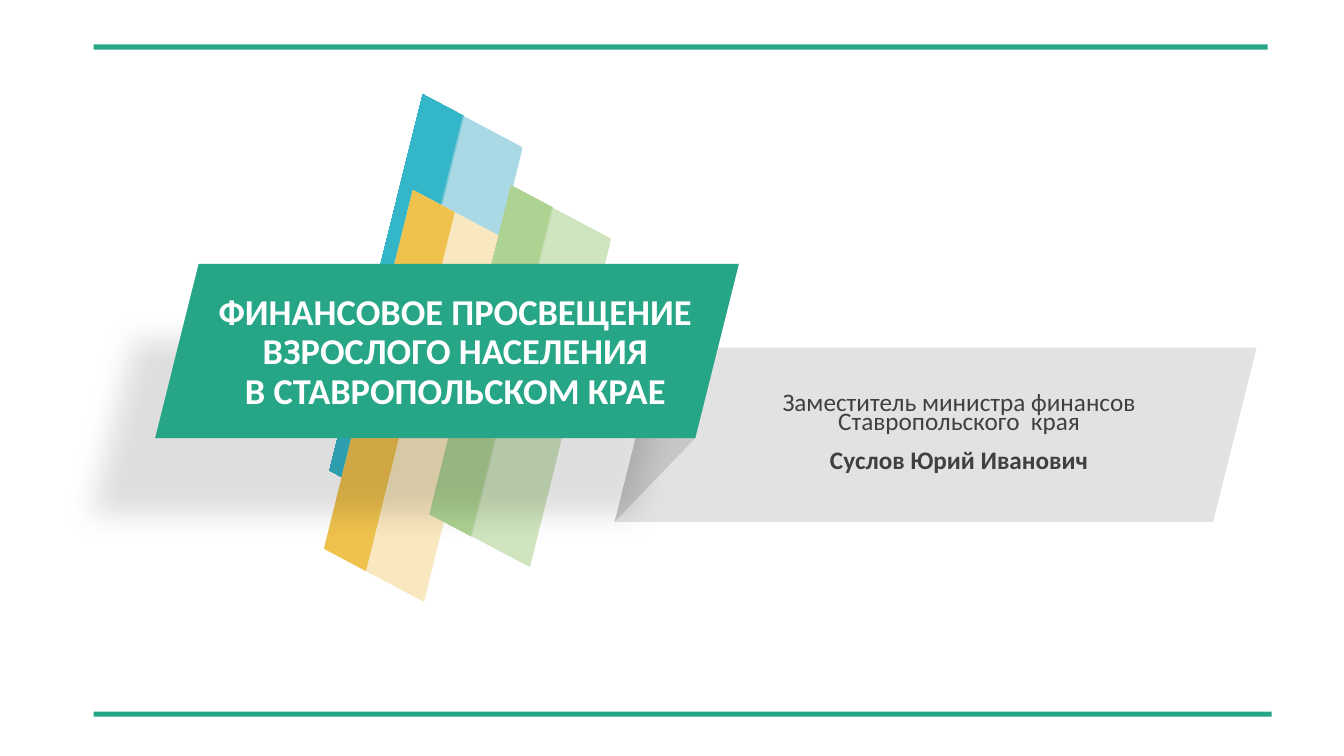
from collections import namedtuple

from lxml.etree import SubElement
from pptx import Presentation
from pptx.dml.color import RGBColor
from pptx.enum.shapes import MSO_SHAPE as Preset
from pptx.enum.text import MSO_ANCHOR as Anchor, MSO_AUTO_SIZE as AutoSize, PP_ALIGN as Align
from pptx.oxml.ns import qn
from pptx.util import Cm, Pt

Box = namedtuple("Box", "left top width height")
GREEN = "27A687"
SKEW = 0.25


def color(value):
    """Turn a hex string into a colour."""
    return RGBColor.from_string(value)


def place(part, box):
    """Move a part into a box given in centimetres."""
    part.left, part.top, part.width, part.height = map(Cm, box)


def paint(part, fill):
    """Give a part a plain fill without line or shadow."""
    part.fill.solid()
    part.fill.fore_color.rgb = color(fill)
    part.line.fill.background()
    part.shadow.inherit = False


def add_block(slide, preset, box, fill):
    """Add a plainly filled preset shape."""
    block = slide.shapes.add_shape(preset, *map(Cm, box))
    paint(block, fill)
    return block


def write(paragraph, text, size=18, ink="404040", bold=False, spacing=1.0, after=0):
    """Write centred text into a paragraph with the given format."""
    paragraph.alignment = Align.CENTER
    paragraph.line_spacing = spacing
    paragraph.space_before, paragraph.space_after = Pt(0), Pt(after)
    run = paragraph.add_run()
    run.text = text
    run.font.name, run.font.size, run.font.bold = "Calibri", Pt(size), bold
    run.font.color.rgb = color(ink)


def open_placeholder(holder, box):
    """Bring a placeholder to the front of its box and return its text frame."""
    place(holder, box)
    holder.element.getparent().append(holder.element)
    frame = holder.text_frame
    frame.word_wrap, frame.auto_size = True, AutoSize.NONE
    frame.vertical_anchor = Anchor.MIDDLE
    return frame


def draw_ribbon(slide, box, light, dark, dark_start):
    """Draw one slanted ribbon split lengthwise into two tones."""
    ribbon = add_block(slide, Preset.PARALLELOGRAM, box, light)
    ribbon.rotation = 283.9
    ribbon.fill.gradient()
    ribbon.fill.gradient_angle = 90
    tones = ((0.53, light), (dark_start, dark))
    for stop, (position, tone) in zip(ribbon.fill.gradient_stops, tones):
        stop.position = position
        stop.color.rgb = color(tone)


def draw_speaker(slide, box):
    """Draw the grey panel with the speaker's post and name."""
    add_block(slide, Preset.PARALLELOGRAM, box, "E2E2E2")
    inner = Box(box.left + 2.7, box.top + 1.1, 11.96, 2.24)
    frame = open_placeholder(slide.placeholders[1], inner)
    write(frame.paragraphs[0], "Заместитель министра финансов Ставропольского  края",
          spacing=Pt(14), after=6)
    write(frame.add_paragraph(), "Суслов Юрий Иванович", bold=True)


def draw_fold(slide, panel, banner):
    """Draw the translucent fold joining the panel to the banner."""
    right = banner.left + banner.width
    corners = [
        (panel.left, panel.top + panel.height),
        (panel.left + SKEW * panel.height, panel.top),
        (right, banner.top),
        (right - SKEW * banner.height, banner.top + banner.height),
    ]
    start, *rest = [(Cm(x), Cm(y)) for x, y in corners]
    fold = slide.shapes.build_freeform(*start).add_line_segments(rest).convert_to_shape()
    paint(fold, "BFBFBF")
    tint = fold.element.spPr.find(qn("a:solidFill"))[0]
    SubElement(tint, qn("a:alpha"), val="76000")


def draw_banner(slide, box):
    """Draw the green banner with its cast shadow and the title."""
    banner = add_block(slide, Preset.PARALLELOGRAM, box, GREEN)
    effects = banner.element.spPr.find(qn("a:effectLst"))
    cast = SubElement(effects, qn("a:outerShdw"), blurRad=str(Pt(21)), dist=str(Pt(71)),
                      dir=str(130 * 60000), algn="ctr", rotWithShape="0")
    tint = SubElement(cast, qn("a:srgbClr"), val="000000")
    SubElement(tint, qn("a:alpha"), val="12000")

    inner = Box(box.left + 0.71, box.top + 0.61, 13.72, 3.25)
    frame = open_placeholder(slide.shapes.title, inner)
    heading = dict(size=26, ink="FFFFFF", bold=True, spacing=Pt(28))
    write(frame.paragraphs[0], "ФИНАНСОВОЕ ПРОСВЕЩЕНИЕ ВЗРОСЛОГО НАСЕЛЕНИЯ", **heading)
    write(frame.add_paragraph(), "В СТАВРОПОЛЬСКОМ КРАЕ", **heading)


def build_cover(slide):
    """Build the cover from back to front."""
    draw_ribbon(slide, Box(5.51, 6.4, 10.46, 2.77), "A9D9E5", "33B6C8", 0.54)
    draw_ribbon(slide, Box(5.54, 8.59, 10.01, 2.77), "F9E7BF", "EFC24D", 0.53)
    draw_ribbon(slide, Box(8.51, 8.1, 9.22, 2.77), "CFE5BF", "AED292", 0.54)
    for top, width in ((17.93, 29.69), (1.12, 29.59)):
        add_block(slide, Preset.RECTANGLE, Box(2.36, top, width, 0.13), GREEN)
    panel = Box(15.49, 8.76, 16.18, 4.39)
    banner = Box(3.91, 6.65, 14.71, 4.39)
    draw_speaker(slide, panel)
    draw_fold(slide, panel, banner)
    draw_banner(slide, banner)


def main():
    """Create the deck and save it."""
    deck = Presentation()
    deck.slide_width, deck.slide_height = Cm(33.87), Cm(19.05)
    build_cover(deck.slides.add_slide(deck.slide_layouts[0]))
    deck.save("out.pptx")


if __name__ == "__main__":
    main()
